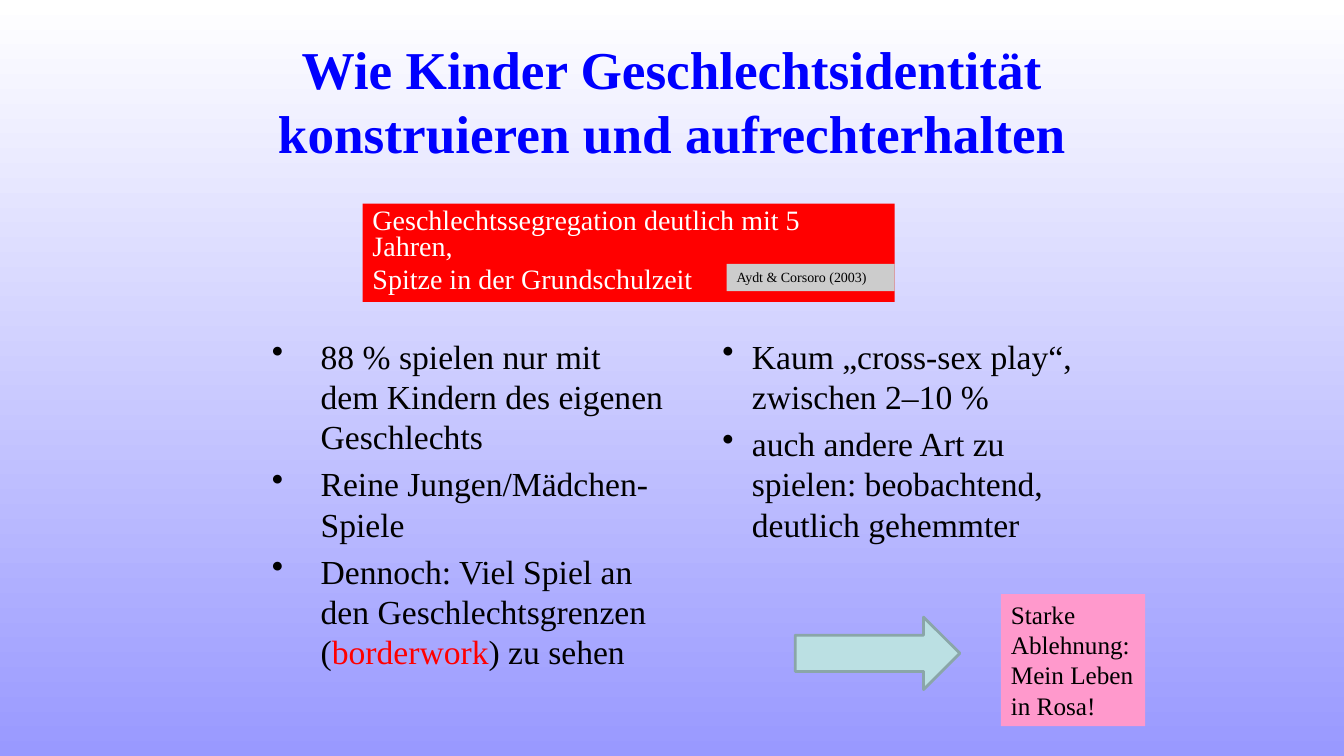
from lxml.etree import SubElement
from pptx import Presentation
from pptx.dml.color import RGBColor
from pptx.enum.shapes import MSO_SHAPE
from pptx.enum.text import MSO_ANCHOR, MSO_AUTO_SIZE, PP_ALIGN
from pptx.oxml.ns import qn
from pptx.util import Pt

COLORS = {
    "white": "FFFFFF", "lavender": "9999FF", "blue": "0000FF",
    "black": "000000", "red": "FF0000", "grey": "CCCCCC",
    "pink": "FF99CC", "aqua": "BBE0E3", "aqua_edge": "8AA6A8",
}


def color(name):
    return RGBColor.from_string(COLORS[name])


def write(frame, text, size=24, ink="black", bold=False, align=PP_ALIGN.LEFT,
          indent=0, line_spacing=None, highlight=None):
    """Add one paragraph, with an optional bullet indent and a red phrase."""
    frame.word_wrap = True
    frame.auto_size = MSO_AUTO_SIZE.NONE
    first = not frame.paragraphs[0].runs
    paragraph = frame.paragraphs[0] if first else frame.add_paragraph()
    if indent:
        properties = paragraph._p.get_or_add_pPr()
        properties.set("marL", str(Pt(indent)))
        properties.set("indent", str(-Pt(indent)))
        SubElement(properties, qn("a:buChar")).set("char", "•")
    paragraph.alignment = align
    paragraph.space_before = Pt(0 if first else size * 0.2)
    if line_spacing:
        paragraph.line_spacing = line_spacing
    for part in text.partition(highlight) if highlight else [text]:
        run = paragraph.add_run()
        run.text = part
        run.font.name = "Times New Roman"
        run.font.size = Pt(size)
        run.font.bold = bold
        run.font.color.rgb = color("red" if part == highlight else ink)


deck = Presentation()
deck.slide_width, deck.slide_height = Pt(960), Pt(540)
slide = deck.slides.add_slide(deck.slide_layouts[5])

# Background fading downwards from white to lavender
background = slide.background.fill
background.gradient()
background.gradient_angle = 270
for stop, position, name in zip(background.gradient_stops, (0, 1), ("white", "lavender")):
    stop.position = position
    stop.color.rgb = color(name)

# Title
title = slide.shapes.title
title.left, title.top, title.width, title.height = Pt(156), Pt(21.6), Pt(648), Pt(99.4)
title.text_frame.vertical_anchor = MSO_ANCHOR.MIDDLE
write(title.text_frame, "Wie Kinder Geschlechtsidentität konstruieren und aufrechterhalten",
      size=38, ink="blue", bold=True, align=PP_ALIGN.CENTER)

# Two bulleted columns: left, width, height, indent, findings
columns = [
    (187.2, 296, 250, 34.8, [
        "88 % spielen nur mit dem Kindern des eigenen Geschlechts",
        "Reine Jungen/Mädchen-Spiele",
        "Dennoch: Viel Spiel an den Geschlechtsgrenzen (borderwork) zu sehen",
    ]),
    (509, 272, 202, 21, [
        "Kaum „cross-sex play“, zwischen 2–10 %",
        "auch andere Art zu spielen: beobachtend, deutlich gehemmter",
    ]),
]
for left, width, height, indent, findings in columns:
    column = slide.shapes.add_textbox(Pt(left), Pt(236.2), Pt(width), Pt(height))
    for finding in findings:
        write(column.text_frame, finding, indent=indent,
              highlight="borderwork" if "borderwork" in finding else None)

# Coloured labels: place, fill, paragraphs, text format
labels = [
    ((259, 145.4, 380, 70.2), "red",
     ["Geschlechtssegregation deutlich mit 5 Jahren,", "Spitze in der Grundschulzeit"],
     {"size": 20, "ink": "white", "line_spacing": 0.8}),
    ((519, 188.6, 120, 19.4), "grey", ["Aydt & Corsoro (2003)"], {"size": 10}),
    ((715, 424.4, 103, 94.4), "pink", ["Starke Ablehnung: Mein Leben in Rosa!"], {"size": 18}),
]
for place, fill, lines, text_format in labels:
    label = slide.shapes.add_shape(MSO_SHAPE.RECTANGLE, *map(Pt, place))
    label.shadow.inherit = False
    label.fill.solid()
    label.fill.fore_color.rgb = color(fill)
    label.line.fill.background()
    label.text_frame.vertical_anchor = MSO_ANCHOR.TOP
    for line in lines:
        write(label.text_frame, line, **text_format)

# Arrow towards the rejection label
arrow = slide.shapes.add_shape(MSO_SHAPE.RIGHT_ARROW, Pt(568), Pt(440.8), Pt(117.6), Pt(51.8))
arrow.shadow.inherit = False
arrow.fill.solid()
arrow.fill.fore_color.rgb = color("aqua")
arrow.line.color.rgb = color("aqua_edge")
arrow.line.width = Pt(2)

deck.save("out.pptx")
